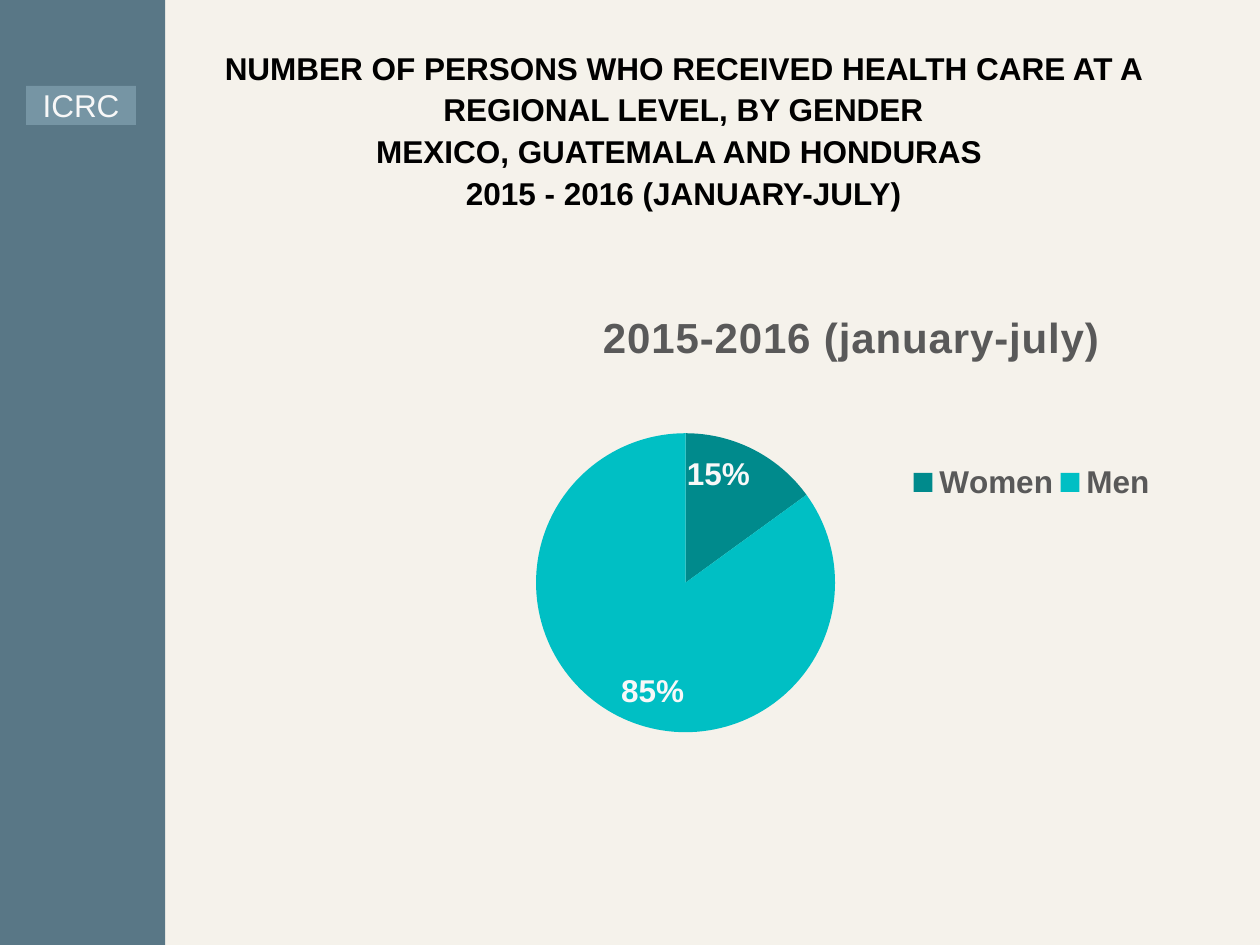
import lxml.etree
import pptx
import pptx.chart.data
import pptx.dml.color
import pptx.enum.chart
import pptx.enum.shapes
import pptx.enum.text
import pptx.oxml.ns
import pptx.util

Cm, Pt = pptx.util.Cm, pptx.util.Pt
qn = pptx.oxml.ns.qn

THEME = {
    "font": "Arial",
    "background": "F5F2EB",
    "band": "597786",
    "tag": "7695A4",
    "title": "000000",
    "chart_text": "595959",
    "light": "F8F8F8",
    "slices": {"Women": "008A8C", "Men": "00BFC4"},
    "body_size": 18,
    "chart_title_size": 24,
}


def style(font, color, size=THEME["body_size"], bold=True):
    values = {"name": THEME["font"], "size": Pt(size), "bold": bold}
    for name, value in values.items():
        setattr(font, name, value)
    font.color.rgb = pptx.dml.color.RGBColor.from_string(THEME[color])


def place(parent, index, **values):
    for old in parent.findall(qn("c:layout")):
        parent.remove(old)
    layout = lxml.etree.Element(qn("c:layout"))
    manual = lxml.etree.SubElement(layout, qn("c:manualLayout"))
    for name, value in values.items():
        lxml.etree.SubElement(manual, qn(f"c:{name}")).set("val", str(value))
    parent.insert(index, layout)


prs = pptx.Presentation()
prs.slide_width, prs.slide_height = Cm(25.4), Cm(19.05)
s = prs.slides.add_slide(prs.slide_layouts[5])
s.background.fill.solid()
s.background.fill.fore_color.rgb = pptx.dml.color.RGBColor.from_string(THEME["background"])

boxes = {}
for name, box in {"band": (0, 0, 3.33, 19.05), "tag": (0.53, 1.73, 2.21, 0.79)}.items():
    sp = s.shapes.add_shape(pptx.enum.shapes.MSO_SHAPE.RECTANGLE, *map(Cm, box))
    sp.shadow.inherit = False
    sp.fill.solid()
    sp.fill.fore_color.rgb = pptx.dml.color.RGBColor.from_string(THEME[name])
    sp.line.fill.background()
    boxes[name] = sp

title = s.shapes.title
title.left, title.top, title.width, title.height = map(Cm, (3.66, 2.13, 20.24, 0.91))
title.text_frame.text = (
    "NUMBER OF PERSONS WHO RECEIVED HEALTH CARE AT A REGIONAL LEVEL, BY GENDER\v"
    "MEXICO, GUATEMALA AND HONDURAS \v2015 - 2016 (JANUARY-JULY)"
)
boxes["tag"].text_frame.text = "ICRC"
for sp, color, bold, spacing in ((title, "title", True, 1.1), (boxes["tag"], "light", False, 1.0)):
    tf = sp.text_frame
    frame = {
        "word_wrap": True,
        "auto_size": pptx.enum.text.MSO_AUTO_SIZE.NONE,
        "vertical_anchor": pptx.enum.text.MSO_ANCHOR.MIDDLE,
    }
    for name, value in frame.items():
        setattr(tf, name, value)
    p = tf.paragraphs[0]
    p.alignment = pptx.enum.text.PP_ALIGN.CENTER
    p.line_spacing = spacing
    for r in p.runs:
        style(r.font, color, bold=bold)

data = pptx.chart.data.CategoryChartData()
data.categories = list(THEME["slices"])
data.add_series("Series 1", (15, 85))
chart = s.shapes.add_chart(
    pptx.enum.chart.XL_CHART_TYPE.PIE, *map(Cm, (3.71, 5.72, 20.22, 9.42)), data
).chart
style(chart.font, "title", 10, False)

chart.has_title = True
p = chart.chart_title.text_frame.paragraphs[0]
r = p.add_run()
r.text = "2015-2016 (january-july)"
style(r.font, "chart_text", THEME["chart_title_size"])
r.font._element.set("spc", "50")

chart.has_legend = True
chart.legend.position = pptx.enum.chart.XL_LEGEND_POSITION.TOP
chart.legend.include_in_layout = False
style(chart.legend.font, "chart_text")

plot = chart.plots[0]
plot.vary_by_categories = True
for i, color in enumerate(THEME["slices"].values()):
    fill = plot.series[0].points[i].format.fill
    fill.solid()
    fill.fore_color.rgb = pptx.dml.color.RGBColor.from_string(color)

plot.has_data_labels = True
labels = plot.data_labels
settings = {
    "show_percentage": True,
    "show_value": False,
    "number_format": "0%",
    "number_format_is_linked": False,
    "position": pptx.enum.chart.XL_LABEL_POSITION.INSIDE_END,
}
for name, value in settings.items():
    setattr(labels, name, value)
style(labels.font, "light")

root = chart.element.find(qn("c:chart"))
edge = {"xMode": "edge", "yMode": "edge"}
place(root.find(qn("c:title")), 1, **edge, x=0.41, y=0.04)
place(root.find(qn("c:legend")), 1, **edge, x=0.72, y=0.37, w=0.25, h=0.11)
place(root.find(qn("c:plotArea")), 0, layoutTarget="inner", **edge, x=0.35, y=0.32, w=0.3, h=0.64)

prs.save("out.pptx")
